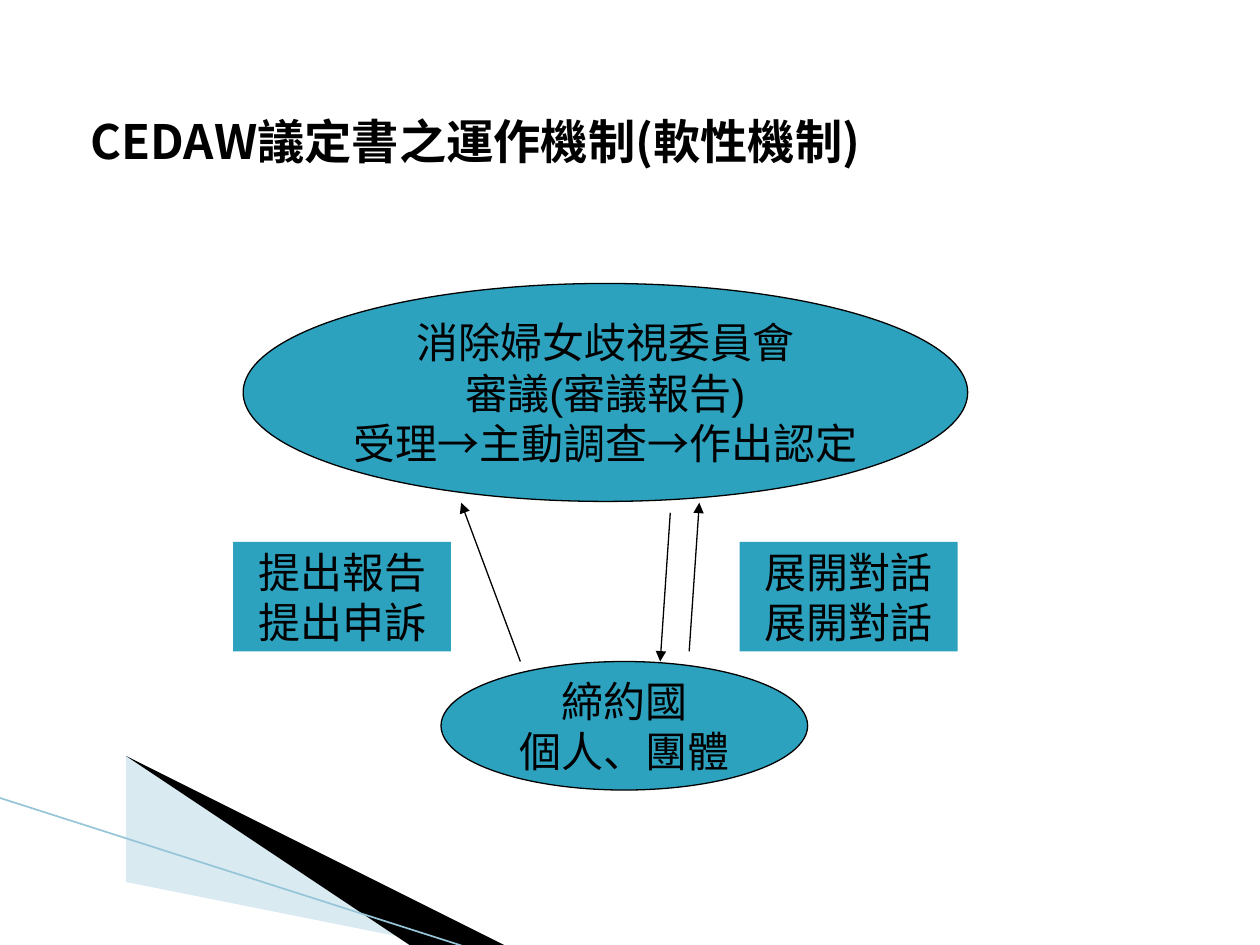
from lxml.etree import SubElement
from pptx import Presentation
from pptx.dml.color import RGBColor
from pptx.enum.shapes import MSO_CONNECTOR, MSO_SHAPE
from pptx.enum.text import MSO_ANCHOR, PP_ALIGN
from pptx.oxml.ns import qn
from pptx.util import Inches, Pt

TEAL, BLACK = "2DA2BF", "000000"


def paint(fmt, color):
    """Give a fill or a line one solid colour."""
    fill = getattr(fmt, "fill", fmt)
    fill.solid()
    fill.fore_color.rgb = RGBColor.from_string(color)


def draw_line(start, end, color, width):
    line = shapes.add_connector(MSO_CONNECTOR.STRAIGHT, *map(Inches, start + end))
    paint(line.line, color)
    line.line.width = Pt(width)
    SubElement(line._element.spPr, qn("a:effectLst"))
    return line


deck = Presentation()
deck.slide_width, deck.slide_height = Inches(10), Inches(7.5)
slide = deck.slides.add_slide(deck.slide_layouts[1])
shapes = slide.shapes

# Corner wedges
wedges = [
    ("A0CBDC", 40, [(0.55, 6.51), (5.95, 7.51), (4.56, 7.51), (0.55, 6.5)]),
    (BLACK, 100, [(0.53, 6.49), (4.57, 7.51), (3.72, 7.52), (0.54, 6.5)]),
]
for color, alpha, points in wedges:
    pen = shapes.build_freeform(*points[0], scale=Inches(1))
    pen.add_line_segments(points[1:], close=True)
    wedge = pen.convert_to_shape()
    wedge.shadow.inherit = False
    wedge.line.fill.background()
    paint(wedge, color)
    if alpha < 100:
        tint = wedge._element.spPr.find(".//" + qn("a:srgbClr"))
        SubElement(tint, qn("a:alpha"), val=str(alpha * 1000))
draw_line((-0.01, 6.33), (3.71, 7.52), "97C5D8", 0.95)

# Heading, held in the body placeholder
title = shapes.title._element
title.getparent().remove(title)
body = slide.placeholders[1]
body.left, body.top, body.width, body.height = map(Inches, (0.5, 0.84, 9, 5.86))
head = body.text_frame.paragraphs[0]
head.text = "CEDAW議定書之運作機制(軟性機制)"
props = head._p.get_or_add_pPr()
props.set("marL", str(Inches(0.4)))
props.set("indent", str(Inches(-0.28)))
head.space_before = Pt(4)
SubElement(props, qn("a:buNone"))
head.font.name, head.font.size, head.font.bold = "Noto Sans CJK SC", Pt(27), True
paint(head.font, BLACK)

# Committee, parties and the two labels between them
OVAL, RECT = MSO_SHAPE.OVAL, MSO_SHAPE.RECTANGLE
nodes = [
    (OVAL, (1.93, 2.25, 5.75, 1.73),
     ["消除婦女歧視委員會", "審議(審議報告)", "受理→主動調查→作出認定"]),
    (OVAL, (3.5, 5.25, 2.91, 1.02), ["締約國", "個人、團體"]),
    (RECT, (1.85, 4.3, 1.73, 0.87), ["提出報告", "提出申訴"]),
    (RECT, (5.87, 4.3, 1.73, 0.87), ["展開對話", "展開對話"]),
]
for kind, box, words in nodes:
    node = shapes.add_shape(kind, *map(Inches, box))
    node.shadow.inherit = False
    paint(node, TEAL)
    if kind == OVAL:
        paint(node.line, BLACK)
        node.line.width = Pt(0.75)
    else:
        node.line.fill.background()
    frame = node.text_frame
    frame.word_wrap = False
    frame.vertical_anchor = MSO_ANCHOR.MIDDLE
    frame.text = "\n".join(words)
    for para in frame.paragraphs:
        para.alignment = PP_ALIGN.CENTER
        para.font.name, para.font.size = "Arial", Pt(24)
        paint(para.font, BLACK)

# Arrows between the ovals
arrows = [
    ((4.13, 5.25), (3.66, 3.99)),
    ((5.32, 4.07), (5.24, 5.25)),
    ((5.47, 5.17), (5.55, 3.99)),
]
for start, end in arrows:
    arrow = draw_line(start, end, BLACK, 0.75)
    SubElement(arrow.line._get_or_add_ln(), qn("a:tailEnd"), type="triangle")

deck.save("out.pptx")
